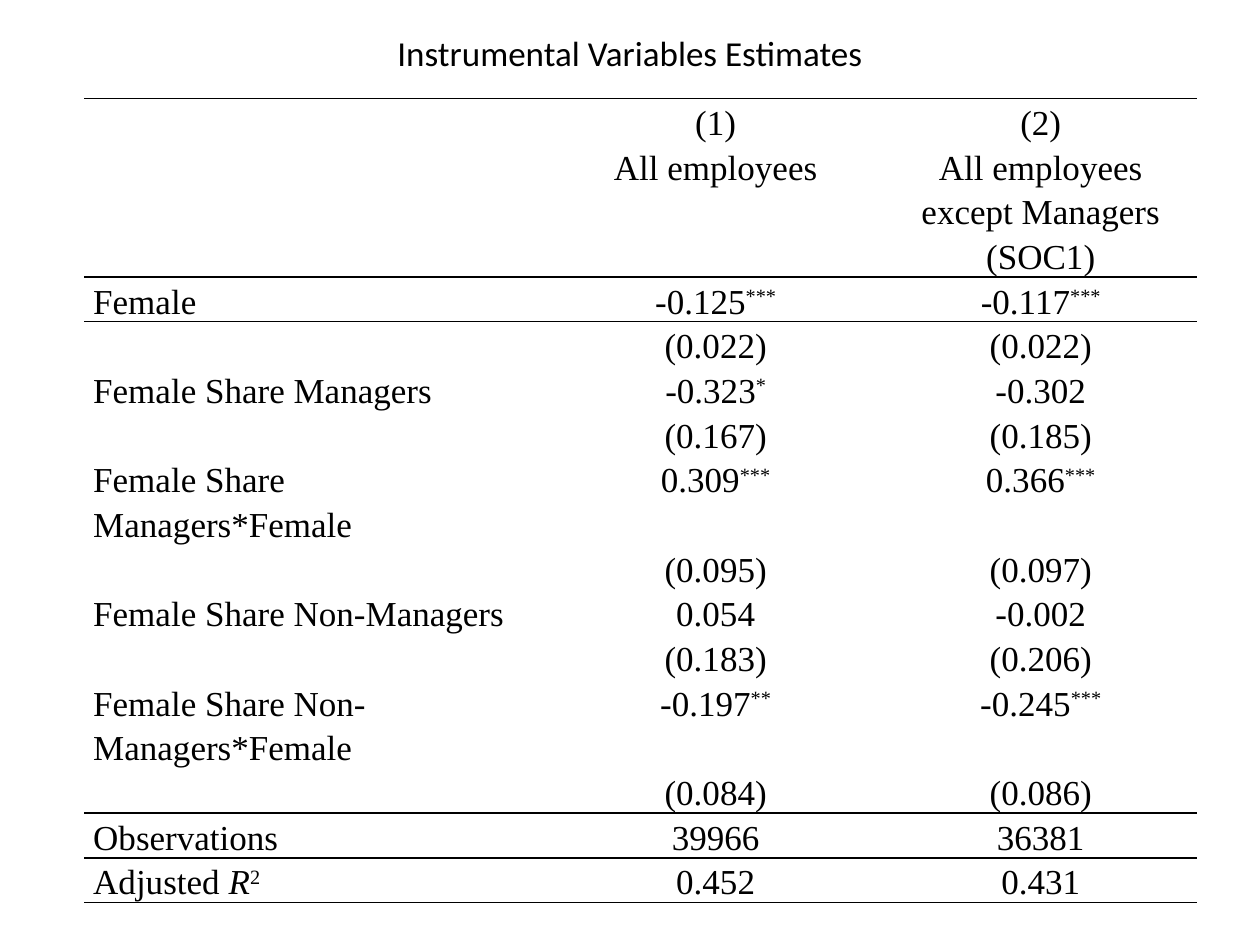
"""Build a slide with a regression table of instrumental variables estimates."""
import dataclasses

import lxml.etree
import pptx
import pptx.dml.color
import pptx.enum.text
import pptx.oxml.ns
import pptx.table
import pptx.text.text
import pptx.util

SLIDE_WIDTH = pptx.util.Inches(10)
SLIDE_HEIGHT = pptx.util.Inches(7.5)
LINE_HEIGHT = pptx.util.Inches(0.35)
COLUMN_WIDTHS = (3.67, 2.68, 2.48)
INK = "000000"
PLAIN_TABLE_STYLE = "{2D5ABB26-0587-4C30-8999-92F81FD0307C}"


@dataclasses.dataclass(frozen=True)
class Piece:
    text: str
    raised: bool = False
    italic: bool = False


@dataclasses.dataclass(frozen=True)
class Row:
    cells: tuple[tuple[Piece, ...], ...]
    lines: int = 1
    rule: str = ""


@dataclasses.dataclass(frozen=True)
class Estimate:
    value: str
    stars: str
    error: str


@dataclasses.dataclass(frozen=True)
class Regressor:
    label: str
    estimates: tuple[Estimate, ...]
    lines: int = 1


REGRESSORS = (
    Regressor("Female", (Estimate("-0.125", "***", "0.022"), Estimate("-0.117", "***", "0.022"))),
    Regressor("Female Share Managers", (Estimate("-0.323", "*", "0.167"), Estimate("-0.302", "", "0.185"))),
    Regressor("Female Share Managers*Female", (Estimate("0.309", "***", "0.095"), Estimate("0.366", "***", "0.097")), 2),
    Regressor("Female Share Non-Managers", (Estimate("0.054", "", "0.183"), Estimate("-0.002", "", "0.206"))),
    Regressor("Female Share Non-Managers*Female", (Estimate("-0.197", "**", "0.084"), Estimate("-0.245", "***", "0.086")), 2),
)


def color(value: str) -> pptx.dml.color.RGBColor:
    return pptx.dml.color.RGBColor.from_string(value)


def plain_row(*texts: str, lines: int = 1, rule: str = "") -> Row:
    return Row(tuple((Piece(text),) if text else () for text in texts), lines, rule)


def regressor_rows(regressor: Regressor, first: bool, last: bool) -> list[Row]:
    values = tuple(
        (Piece(item.value),) + ((Piece(item.stars, raised=True),) if item.stars else ())
        for item in regressor.estimates
    )
    errors = (f"({item.error})" for item in regressor.estimates)
    return [
        Row(((Piece(regressor.label),), *values), regressor.lines, "lnT" if first else ""),
        plain_row("", *errors, rule="lnB" if last else ""),
    ]


def table_rows() -> list[Row]:
    rows = [
        plain_row("", "(1)", "(2)", rule="lnT"),
        plain_row("", "All employees", "All employees except Managers (SOC1)", lines=3, rule="lnB"),
    ]
    for regressor in REGRESSORS:
        rows += regressor_rows(regressor, regressor is REGRESSORS[0], regressor is REGRESSORS[-1])
    fit_label = (Piece("Adjusted "), Piece("R", italic=True), Piece("2", raised=True))
    rows.append(plain_row("Observations", "39966", "36381", rule="lnT"))
    rows.append(Row((fit_label, (Piece("0.452"),), (Piece("0.431"),)), rule="lnB"))
    return rows


def style_paragraph(paragraph: pptx.text.text._Paragraph, typeface: str, centred: bool) -> None:
    align = pptx.enum.text.PP_ALIGN
    paragraph.alignment = align.CENTER if centred else align.LEFT
    paragraph.font.size = pptx.util.Pt(20)
    paragraph.font.name = typeface
    paragraph.font.color.rgb = color(INK)


def add_rule(cell: pptx.table._Cell, side: str) -> None:
    qn = pptx.oxml.ns.qn
    line = lxml.etree.Element(qn(f"a:{side}"), w=str(pptx.util.Pt(1)))
    fill = lxml.etree.SubElement(line, qn("a:solidFill"))
    lxml.etree.SubElement(fill, qn("a:srgbClr"), val=INK)
    cell._tc.get_or_add_tcPr().insert(0, line)


def fill_cell(cell: pptx.table._Cell, pieces: tuple[Piece, ...], centred: bool, rule: str) -> None:
    cell.margin_left = cell.margin_right = pptx.util.Inches(0.07)
    cell.margin_top = cell.margin_bottom = 0
    cell.fill.background()
    paragraph = cell.text_frame.paragraphs[0]
    style_paragraph(paragraph, "Times New Roman", centred)
    paragraph.line_spacing = 1.15
    for piece in pieces:
        run = paragraph.add_run()
        run.text = piece.text
        if piece.italic:
            run.font.italic = True
        if piece.raised:
            run._r.get_or_add_rPr().set("baseline", "30000")
    if rule:
        add_rule(cell, rule)


def add_title(slide: pptx.slide.Slide) -> None:
    title = slide.shapes.title
    title.left, title.top = int(SLIDE_WIDTH * 0.05), int(SLIDE_HEIGHT * 0.01)
    title.width, title.height = int(SLIDE_WIDTH * 0.9), int(SLIDE_HEIGHT * 0.09)
    title.text_frame.text = "Instrumental Variables Estimates"
    title.text_frame.vertical_anchor = pptx.enum.text.MSO_ANCHOR.MIDDLE
    style_paragraph(title.text_frame.paragraphs[0], "Calibri", True)


def add_estimates(slide: pptx.slide.Slide) -> None:
    rows = table_rows()
    frame = slide.shapes.add_table(
        len(rows), len(COLUMN_WIDTHS), pptx.util.Inches(0.67), pptx.util.Inches(0.78),
        pptx.util.Inches(sum(COLUMN_WIDTHS)), LINE_HEIGHT * sum(row.lines for row in rows),
    )
    estimates = frame.table
    estimates.first_row = estimates.horz_banding = False
    estimates._tbl.tblPr.find(pptx.oxml.ns.qn("a:tableStyleId")).text = PLAIN_TABLE_STYLE
    for column, width in zip(estimates.columns, COLUMN_WIDTHS):
        column.width = pptx.util.Inches(width)
    for row_index, row in enumerate(rows):
        estimates.rows[row_index].height = LINE_HEIGHT * row.lines
        for column_index, pieces in enumerate(row.cells):
            fill_cell(estimates.cell(row_index, column_index), pieces, column_index > 0, row.rule)


def main() -> None:
    presentation = pptx.Presentation()
    presentation.slide_width, presentation.slide_height = SLIDE_WIDTH, SLIDE_HEIGHT
    slide = presentation.slides.add_slide(presentation.slide_layouts[5])
    add_title(slide)
    add_estimates(slide)
    presentation.save("out.pptx")


if __name__ == "__main__":
    main()
